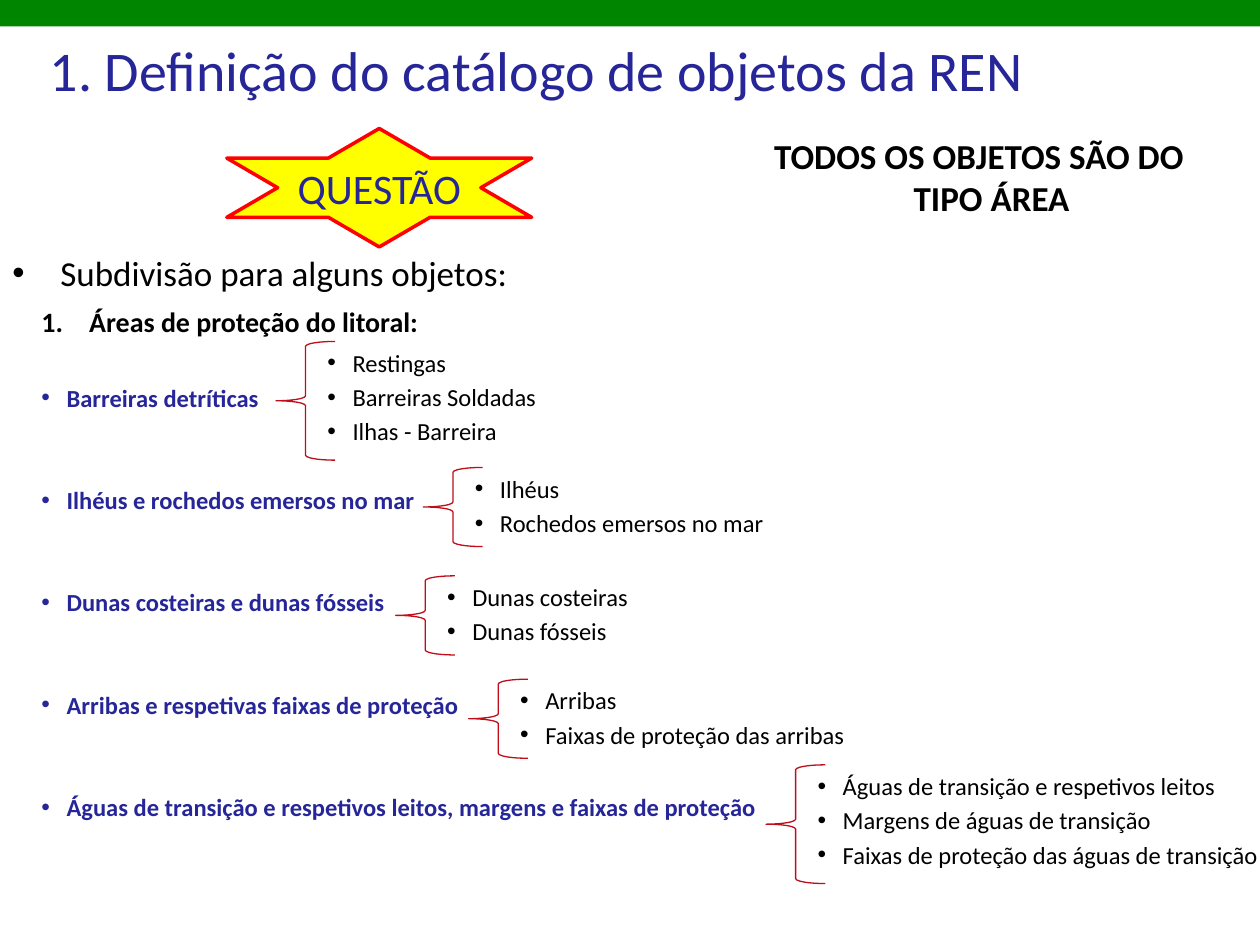
from lxml.etree import SubElement
from pptx import Presentation
from pptx.dml.color import RGBColor
from pptx.enum.shapes import MSO_SHAPE
from pptx.enum.text import MSO_ANCHOR, PP_ALIGN
from pptx.oxml.ns import qn
from pptx.util import Inches, Pt

COLS, ROWS = 100, 75
BLUE, BLACK, GREEN, YELLOW, RED, CRIMSON = (
    "262699", "000000", "008500", "FFFF00", "FF0000", "BF0D1A")

prs = Presentation()
prs.slide_width, prs.slide_height = Inches(10), Inches(7.5)
CELL_W, CELL_H = prs.slide_width / COLS, prs.slide_height / ROWS

# label, brace column, brace row, members of the subdivision
GROUPS = [
    ("Barreiras detríticas", 21.9, 27.1,
     ["Restingas", "Barreiras Soldadas", "Ilhas - Barreira"]),
    ("Ilhéus e rochedos emersos no mar", 33.6, 37.1,
     ["Ilhéus", "Rochedos emersos no mar"]),
    ("Dunas costeiras e dunas fósseis", 31.4, 45.7,
     ["Dunas costeiras", "Dunas fósseis"]),
    ("Arribas e respetivas faixas de proteção", 37.2, 53.9,
     ["Arribas", "Faixas de proteção das arribas"]),
    ("Águas de transição e respetivos leitos, margens e faixas de proteção",
     60.8, 60.7,
     ["Águas de transição e respetivos leitos", "Margens de águas de transição",
      "Faixas de proteção das águas de transição"]),
]


def color(hex_string):
    return RGBColor.from_string(hex_string)


def on_grid(left, top, width, height):
    """Turn a box in grid columns and rows into slide lengths."""
    return [round(n * cell) for n, cell in
            zip((left, top, width, height), (CELL_W, CELL_H) * 2)]


def add_paragraph(tf, text, size, ink=BLACK, bold=False, align=PP_ALIGN.LEFT,
                  hang=0, bullet=None, before=0):
    first = not tf.paragraphs[0].runs
    p = tf.paragraphs[0] if first else tf.add_paragraph()
    p.alignment = align
    p.space_before = Pt(0 if first else before)
    pPr = p._p.get_or_add_pPr()
    pPr.set("marL", str(Inches(hang)))
    pPr.set("indent", str(-Inches(hang)))
    if bullet == "number":
        SubElement(pPr, qn("a:buAutoNum"), type="arabicPeriod")
    elif bullet:
        SubElement(pPr, qn("a:buFont"), typeface="Arial")
        SubElement(pPr, qn("a:buChar"), char=bullet)
    r = p.add_run()
    r.text = text
    for name, value in dict(name="Calibri", size=Pt(size), bold=bold).items():
        setattr(r.font, name, value)
    r.font.color.rgb = color(ink)


def add_text(s, box, anchor=MSO_ANCHOR.TOP):
    tf = s.shapes.add_textbox(*on_grid(*box)).text_frame
    tf.word_wrap, tf.vertical_anchor = True, anchor
    return tf


def add_figure(s, kind, box, fill=None, line=None, weight=0.75):
    sp = s.shapes.add_shape(kind, *on_grid(*box))
    sp.shadow.inherit = False
    if fill:
        sp.fill.solid()
        sp.fill.fore_color.rgb = color(fill)
    else:
        sp.fill.background()
    if line:
        sp.line.color.rgb = color(line)
        sp.line.width = Pt(weight)
    else:
        sp.line.fill.background()
    return sp


def add_header(s, left, top, width):
    add_figure(s, MSO_SHAPE.RECTANGLE, (left, top, width, 2.1), GREEN)
    tf = add_text(s, (left, top + 2.3, 0.852 * width, 6.3), MSO_ANCHOR.MIDDLE)
    add_paragraph(tf, "1. Definição do catálogo de objetos da REN", 32, BLUE,
                  align=PP_ALIGN.CENTER)


def add_question(s, left, top):
    star = add_figure(s, MSO_SHAPE.STAR_6_POINT, (left, top, 24.2, 9.4),
                      YELLOW, RED, 2)
    tf = star.text_frame
    tf.word_wrap, tf.vertical_anchor = False, MSO_ANCHOR.MIDDLE
    add_paragraph(tf, "QUESTÃO", 24, BLUE, align=PP_ALIGN.CENTER)
    tf = add_text(s, (left + 39.8, top, 39.8, 8.6))
    add_paragraph(tf, "TODOS OS OBJETOS SÃO DO TIPO ÁREA", 20, bold=True,
                  align=PP_ALIGN.CENTER, hang=0.2)


def add_outline(s, left, top, width):
    tf = add_text(s, (left, top, width, 5.5))
    add_paragraph(tf, "Subdivisão para alguns objetos:", 20, hang=0.38, bullet="•")
    tf = add_text(s, (left + 2.3, top + 4.2, width + 2, 39.8))
    add_paragraph(tf, "Áreas de proteção do litoral:", 16, bold=True,
                  hang=0.38, bullet="number")
    for i, (label, *_) in enumerate(GROUPS):
        add_paragraph(tf, label, 14, BLUE, True, hang=0.2, bullet="•",
                      before=41.7 if i else 25.2)


def add_subdivision(s, left, top, members):
    height = 3.14 * len(members)
    add_figure(s, MSO_SHAPE.LEFT_BRACE, (left, top, 4.7, height), line=CRIMSON)
    tf = add_text(s, (left + 3.1, top, 37.6, height))
    for member in members:
        add_paragraph(tf, member, 14, hang=0.2, bullet="•", before=2.8)


s = prs.slides.add_slide(prs.slide_layouts[6])
add_header(s, 0, 0, COLS)
add_question(s, 18, 10.2)
add_outline(s, 0, 19.5, 94.1)
for _, column, row, members in GROUPS:
    add_subdivision(s, column, row, members)
prs.save("out.pptx")
